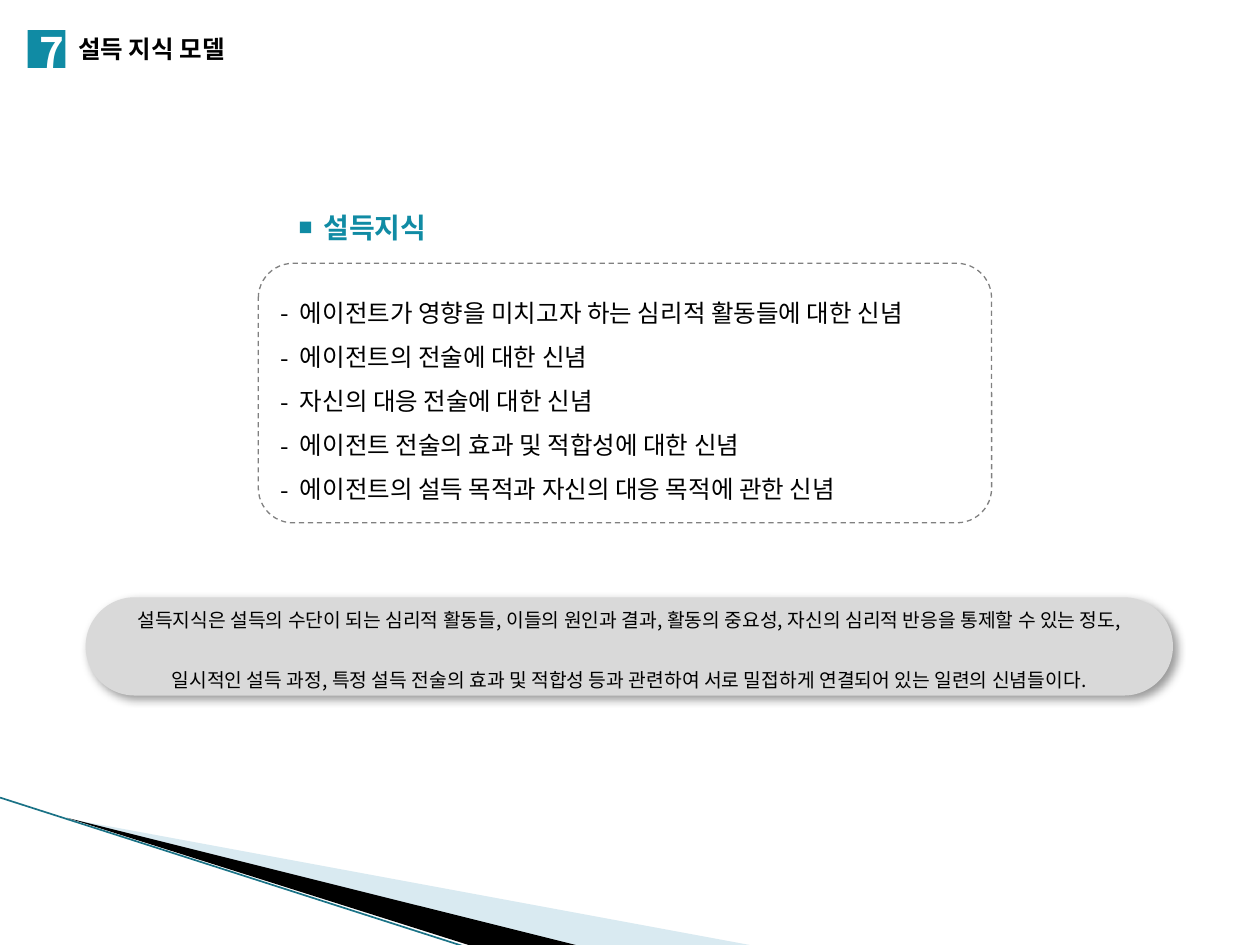
"""Build the slide on the persuasion knowledge model."""
from dataclasses import dataclass
from typing import Optional

import pptx
import pptx.dml.color
import pptx.enum.dml
import pptx.enum.shapes
import pptx.enum.text
import pptx.oxml.ns
import pptx.util
from lxml import etree

COLUMNS, ROWS = 100, 75
WIDTH, HEIGHT = pptx.util.Inches(10), pptx.util.Inches(7.5)
SHAPES = pptx.enum.shapes.MSO_SHAPE
ALIGN = pptx.enum.text.PP_ALIGN


@dataclass(frozen=True)
class Theme:
    font: str = "Noto Sans CJK KR"
    teal: str = "108BA4"
    stripe: str = "1A7286"
    pale: str = "A0CBDC"
    grey: str = "D9D9D9"
    outline: str = "808080"
    black: str = "000000"
    white: str = "FFFFFF"
    number_size: int = 24
    heading_size: int = 16
    body_size: int = 14
    summary_size: int = 11


@dataclass(frozen=True)
class Box:
    column: float
    row: float
    columns: float
    rows: float

    def lengths(self) -> tuple:
        return across(self.column), down(self.row), across(self.columns), down(self.rows)


@dataclass(frozen=True)
class Style:
    size: int
    color: str
    bold: bool = False
    align: ALIGN = ALIGN.LEFT
    line: Optional[float] = None
    gap: float = 0


@dataclass(frozen=True)
class Wedge:
    points: tuple
    color: str
    opacity: int


THEME = Theme()
WEDGES = (
    Wedge(((5.5, 65), (59.5, 75), (45.6, 75)), THEME.pale, 40),
    Wedge(((5.3, 64.9), (45.7, 75), (37.2, 75)), THEME.black, 100),
)
BELIEFS = (
    "에이전트가 영향을 미치고자 하는 심리적 활동들에 대한 신념",
    "에이전트의 전술에 대한 신념",
    "자신의 대응 전술에 대한 신념",
    "에이전트 전술의 효과 및 적합성에 대한 신념",
    "에이전트의 설득 목적과 자신의 대응 목적에 관한 신념",
)
SUMMARY = (
    "설득지식은 설득의 수단이 되는 심리적 활동들, 이들의 원인과 결과, 활동의 중요성, 자신의 심리적 반응을 통제할 수 있는 정도,",
    "일시적인 설득 과정, 특정 설득 전술의 효과 및 적합성 등과 관련하여 서로 밀접하게 연결되어 있는 일련의 신념들이다.",
)


def across(columns: float) -> int:
    return round(WIDTH * columns / COLUMNS)


def down(rows: float) -> int:
    return round(HEIGHT * rows / ROWS)


def rgb(color: str):
    return pptx.dml.color.RGBColor.from_string(color)


def add_element(parent, tag: str, **attributes):
    names = {name: str(value) for name, value in attributes.items()}
    return etree.SubElement(parent, pptx.oxml.ns.qn(tag), names)


def place(shape, box: Box) -> None:
    shape.left, shape.top, shape.width, shape.height = box.lengths()


def write(shape, lines: tuple, style: Style, inset: float = 0, bullet: str = "") -> None:
    frame = shape.text_frame
    frame.text = "\n".join(lines)
    frame.word_wrap = True
    frame.auto_size = pptx.enum.text.MSO_AUTO_SIZE.NONE
    frame.vertical_anchor = pptx.enum.text.MSO_ANCHOR.MIDDLE
    frame.margin_left = frame.margin_right = across(inset)
    frame.margin_top = frame.margin_bottom = 0
    for index, paragraph in enumerate(frame.paragraphs):
        paragraph.alignment = style.align
        paragraph.space_before = pptx.util.Pt(style.gap if index else 0)
        if style.line:
            paragraph.line_spacing = pptx.util.Pt(style.line)
        if bullet:
            properties = paragraph._p.get_or_add_pPr()
            properties.set("marL", str(across(1.5)))
            properties.set("indent", str(-across(1.5)))
            add_element(properties, "a:buFont", typeface=THEME.font)
            add_element(properties, "a:buChar", char=bullet)
        for run in paragraph.runs:
            run.font.name = THEME.font
            run.font.size = pptx.util.Pt(style.size)
            run.font.bold = style.bold
            run.font.color.rgb = rgb(style.color)
            add_element(run._r.get_or_add_rPr(), "a:ea", typeface=THEME.font)


def add_label(slide, box: Box, text: str, style: Style, inset: float = 0) -> None:
    write(slide.shapes.add_textbox(*box.lengths()), (text,), style, inset)


def add_block(slide, kind, box: Box, color: str):
    shape = slide.shapes.add_shape(kind, *box.lengths())
    shape.shadow.inherit = False
    shape.fill.solid()
    shape.fill.fore_color.rgb = rgb(color)
    shape.line.fill.background()
    return shape


def add_wedge(slide, wedge: Wedge) -> None:
    points = [(across(column), down(row)) for column, row in wedge.points]
    builder = slide.shapes.build_freeform(*points[0])
    builder.add_line_segments(points[1:], close=True)
    shape = builder.convert_to_shape()
    shape.shadow.inherit = False
    shape.fill.solid()
    shape.fill.fore_color.rgb = rgb(wedge.color)
    shape.line.fill.background()
    if wedge.opacity < 100:
        color = shape._element.spPr.find(".//" + pptx.oxml.ns.qn("a:srgbClr"))
        add_element(color, "a:alpha", val=wedge.opacity * 1000)


def add_stripe(slide) -> None:
    stripe = slide.shapes.add_connector(
        pptx.enum.shapes.MSO_CONNECTOR.STRAIGHT, 0, down(63.3), across(37.1), down(75.2))
    stripe.line.color.rgb = rgb(THEME.stripe)
    stripe.line.width = pptx.util.Pt(0.95)
    add_element(stripe._element.spPr, "a:effectLst")


def add_frame(slide, box: Box) -> None:
    frame = slide.shapes.add_shape(SHAPES.ROUNDED_RECTANGLE, *box.lengths())
    frame.adjustments[0] = 0.134
    frame.shadow.inherit = False
    frame.fill.background()
    frame.line.color.rgb = rgb(THEME.outline)
    frame.line.width = pptx.util.Pt(0.75)
    frame.line.dash_style = pptx.enum.dml.MSO_LINE.DASH


def add_summary(slide, box: Box) -> None:
    pill = add_block(slide, SHAPES.ROUNDED_RECTANGLE, box, THEME.grey)
    pill.adjustments[0] = 0.5
    effects = pill._element.spPr.find(pptx.oxml.ns.qn("a:effectLst"))
    shadow = add_element(effects, "a:outerShdw", blurRad=pptx.util.Pt(5),
                         dist=pptx.util.Pt(3), dir=45 * 60000, algn="tl", rotWithShape=0)
    color = add_element(shadow, "a:srgbClr", val=THEME.black)
    add_element(color, "a:alpha", val=40000)
    write(pill, SUMMARY, Style(THEME.summary_size, THEME.black, align=ALIGN.CENTER, line=17, gap=17))


def main() -> None:
    presentation = pptx.Presentation()
    presentation.slide_width, presentation.slide_height = WIDTH, HEIGHT
    slide = presentation.slides.add_slide(presentation.slide_layouts[1])
    title, body = slide.placeholders
    panel = Box(20.5, 20.9, 58.2, 20.6)
    for wedge in WEDGES:
        add_wedge(slide, wedge)
    add_stripe(slide)
    place(title, Box(5.2, 2.2, 27.1, 3.4))
    write(title, ("설득 지식 모델",), Style(THEME.body_size, THEME.black, True), 1)
    add_block(slide, SHAPES.RECTANGLE, Box(2.2, 2.4, 3, 3), THEME.teal)
    add_label(slide, Box(3.1, 2.1, 1.9, 4), "7", Style(THEME.number_size, THEME.white, True))
    add_block(slide, SHAPES.RECTANGLE, Box(23.8, 17.6, 0.9, 0.9), THEME.teal)
    add_label(slide, Box(24.7, 16.2, 12, 3.7), "설득지식",
              Style(THEME.heading_size, THEME.teal, True), 1)
    add_frame(slide, panel)
    place(body, panel)
    write(body, BELIEFS, Style(THEME.body_size, THEME.black, line=25.2), 1.8, "-")
    add_summary(slide, Box(6.8, 47.4, 86.3, 7.8))
    presentation.save("out.pptx")


if __name__ == "__main__":
    main()
